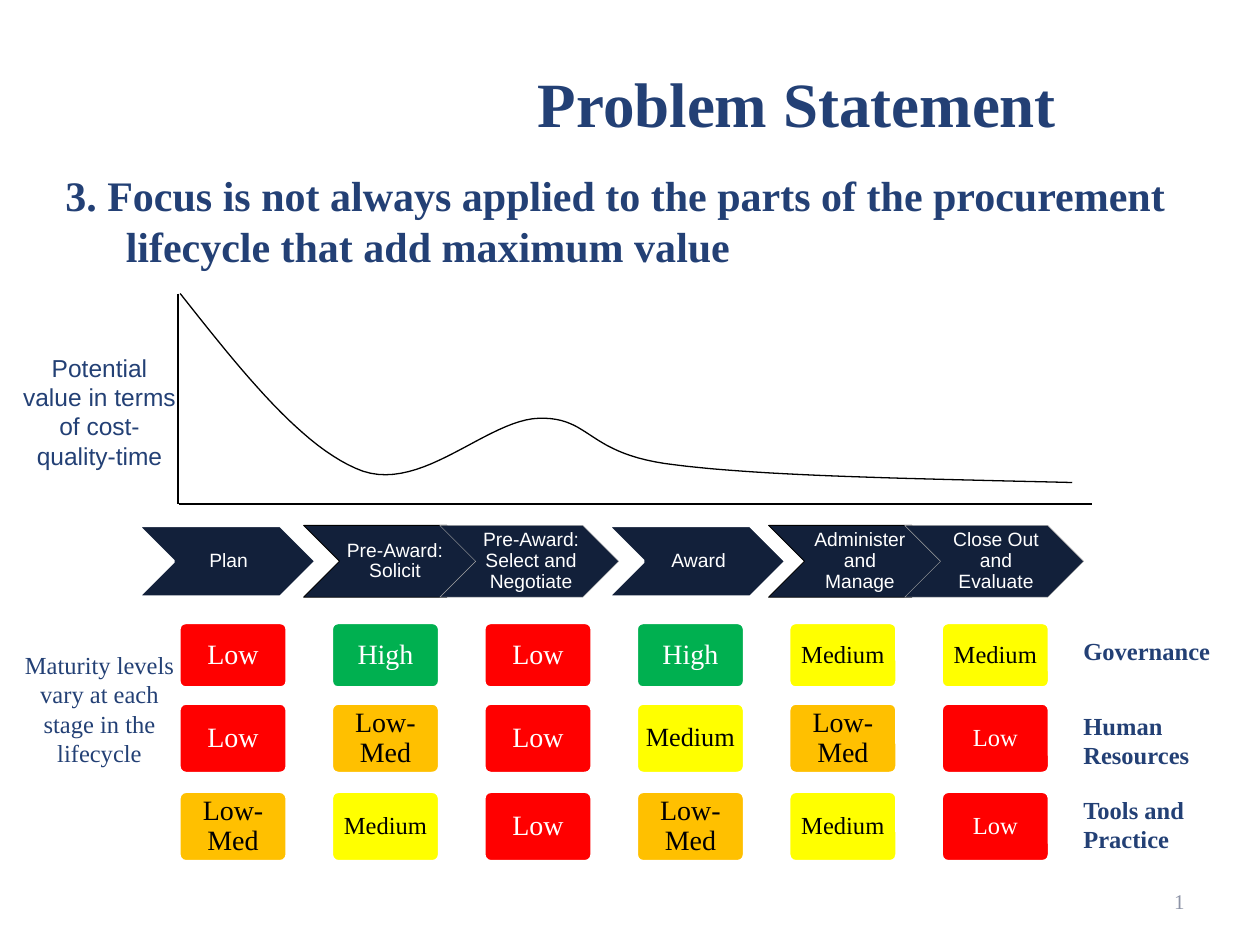
from lxml.etree import SubElement
from pptx import Presentation
from pptx.dml.color import RGBColor
from pptx.enum.shapes import MSO_CONNECTOR as Connector, MSO_SHAPE as Shape
from pptx.enum.text import MSO_ANCHOR as Anchor, PP_ALIGN as Align
from pptx.oxml.ns import qn
from pptx.util import Inches, Pt

NAVY, DARK, WHITE, BLACK = "234075", "12203A", "FFFFFF", "000000"
GREY, RED, GREEN, AMBER, YELLOW = "A6A6A6", "FF0000", "00B050", "FFC000", "FFFF00"
SERIF, SANS = "Times New Roman", "Arial"

presentation = Presentation()
presentation.slide_width, presentation.slide_height = Inches(10), Inches(7.5)
slide = presentation.slides.add_slide(presentation.slide_layouts[6])
shapes = slide.shapes


def write(shape, text, size, color=NAVY, font=SERIF, bold=False,
          align=Align.LEFT, anchor=Anchor.TOP, insets=(0.1, 0.05, 0.1, 0.05)):
    frame = shape.text_frame
    frame.word_wrap = True
    frame.vertical_anchor = anchor
    frame.margin_left, frame.margin_top, frame.margin_right, frame.margin_bottom = map(Inches, insets)
    frame.text = text
    paragraph = frame.paragraphs[0]
    paragraph.alignment = align
    run_font = paragraph.runs[0].font
    run_font.name, run_font.size, run_font.bold = font, Pt(size), bold
    run_font.color.rgb = RGBColor.from_string(color)
    return paragraph


def add_block(kind, box, fill, line, line_width):
    shape = shapes.add_shape(kind, *map(Inches, box))
    shape.shadow.inherit = False
    shape.fill.solid()
    shape.fill.fore_color.rgb = RGBColor.from_string(fill)
    shape.line.color.rgb = RGBColor.from_string(line)
    shape.line.width = Pt(line_width)
    return shape


# Title, statement, side labels and page number
title = shapes.add_textbox(*map(Inches, (4.17, 0.46, 5.25, 0.71)))
write(title, "Problem Statement", 36, bold=True)

statement = shapes.add_textbox(*map(Inches, (0.42, 1.3, 9.25, 0.9)))
paragraph = write(statement, "3. Focus is not always applied to the parts of the procurement "
                  "lifecycle that add maximum value", 24, bold=True)
properties = paragraph._p.get_or_add_pPr()
properties.set("marL", str(Inches(0.48)))
properties.set("indent", str(Inches(-0.48)))

for top, text, font in [
    (2.75, "Potential value in terms of cost-quality-time", SANS),
    (5.11, "Maturity levels vary at each stage in the lifecycle", SERIF),
]:
    label = shapes.add_textbox(*map(Inches, (0.08, top, 1.42, 1.04)))
    write(label, text, 14, font=font, align=Align.CENTER)

page_number = shapes.add_textbox(*map(Inches, (7.17, 6.95, 2.33, 0.4)))
write(page_number, "1", 12, "8D93A6", align=Align.RIGHT, anchor=Anchor.MIDDLE)

# Axes of the value curve
for ends in [(1.41, 2.33, 1.41, 4), (1.42, 4, 8.67, 4)]:
    axis = shapes.add_connector(Connector.STRAIGHT, *map(Inches, ends))
    axis.line.color.rgb = RGBColor.from_string(BLACK)
    axis.line.width = Pt(1)
    SubElement(axis._element.spPr, qn("a:effectLst"))

# Value curve, sampled from cubic Bezier pieces
STEPS = 24
curve_points = [(1.43, 2.33)]
for piece in [
    ((1.92, 2.95), (2.41, 3.57), (2.88, 3.74)),
    ((3.36, 3.9), (3.87, 3.33), (4.28, 3.32)),
    ((4.7, 3.31), (4.65, 3.61), (5.36, 3.69)),
    ((6.06, 3.78), (7.28, 3.8), (8.51, 3.83)),
]:
    controls = (curve_points[-1], *piece)
    for step in range(1, STEPS + 1):
        t = step / STEPS
        weights = ((1 - t) ** 3, 3 * t * (1 - t) ** 2, 3 * t ** 2 * (1 - t), t ** 3)
        curve_points.append(tuple(sum(w * point[i] for w, point in zip(weights, controls))
                                  for i in (0, 1)))
# The builder rounds to whole units, so the points go in as EMU
start, *rest = [(Inches(x), Inches(y)) for x, y in curve_points]
builder = shapes.build_freeform(*start)
builder.add_line_segments(rest, close=False)
curve = builder.convert_to_shape()
curve.shadow.inherit = False
curve.fill.background()
curve.line.color.rgb = RGBColor.from_string(BLACK)
curve.line.width = Pt(0.75)

# Lifecycle stages
for left, text, line, line_width in [
    (1.09, "Plan", WHITE, 2),
    (2.41, "Pre-Award: Solicit", BLACK, 0.5),
    (3.49, "Pre-Award: Select and Negotiate", GREY, 0.25),
    (4.82, "Award", WHITE, 2),
    (6.1, "Administer and Manage", BLACK, 0.5),
    (7.18, "Close Out and Evaluate", GREY, 0.25),
]:
    stage = add_block(Shape.CHEVRON, (left, 4.17, 1.42, 0.57), DARK, line, line_width)
    paragraph = write(stage, text, 11, WHITE, SANS, align=Align.CENTER,
                      anchor=Anchor.MIDDLE, insets=(0.05, 0.02, 0.02, 0.02))
    paragraph.line_spacing = 0.9

# Maturity grid: level -> fill and text colour
LEVELS = {"Low": (RED, WHITE), "Low-Med": (AMBER, BLACK),
          "Medium": (YELLOW, BLACK), "High": (GREEN, WHITE)}
GRID_LEFT, COLUMN_STEP, CELL_WIDTH = 1.42, 1.21, 0.86
for top, height, name, name_top, name_height, levels, sizes in [
    (4.94, 0.52, "Governance", 5, 0.34,
     ("Low", "High", "Low", "High", "Medium", "Medium"), (16, 16, 16, 16, 14, 14)),
    (5.58, 0.56, "Human Resources", 5.59, 0.57,
     ("Low", "Low-Med", "Low", "Medium", "Low-Med", "Low"), (16, 16, 16, 15, 16, 14)),
    (6.28, 0.56, "Tools and Practice", 6.26, 0.57,
     ("Low-Med", "Medium", "Low", "Low-Med", "Medium", "Low"), (16, 14, 16, 16, 14, 14)),
]:
    for column, (level, size) in enumerate(zip(levels, sizes)):
        fill, color = LEVELS[level]
        left = GRID_LEFT + column * COLUMN_STEP
        cell = add_block(Shape.ROUNDED_RECTANGLE, (left, top, CELL_WIDTH, height), fill, WHITE, 2)
        cell.adjustments[0] = 0.1
        inset = 0.07 if size == 16 else 0.05
        paragraph = write(cell, level, size, color, align=Align.CENTER,
                          anchor=Anchor.MIDDLE, insets=[inset] * 4)
        paragraph.line_spacing = 0.9
    row_name = shapes.add_textbox(*map(Inches, (8.5, name_top, 1.33, name_height)))
    write(row_name, name, 14, bold=True)

presentation.save("out.pptx")
